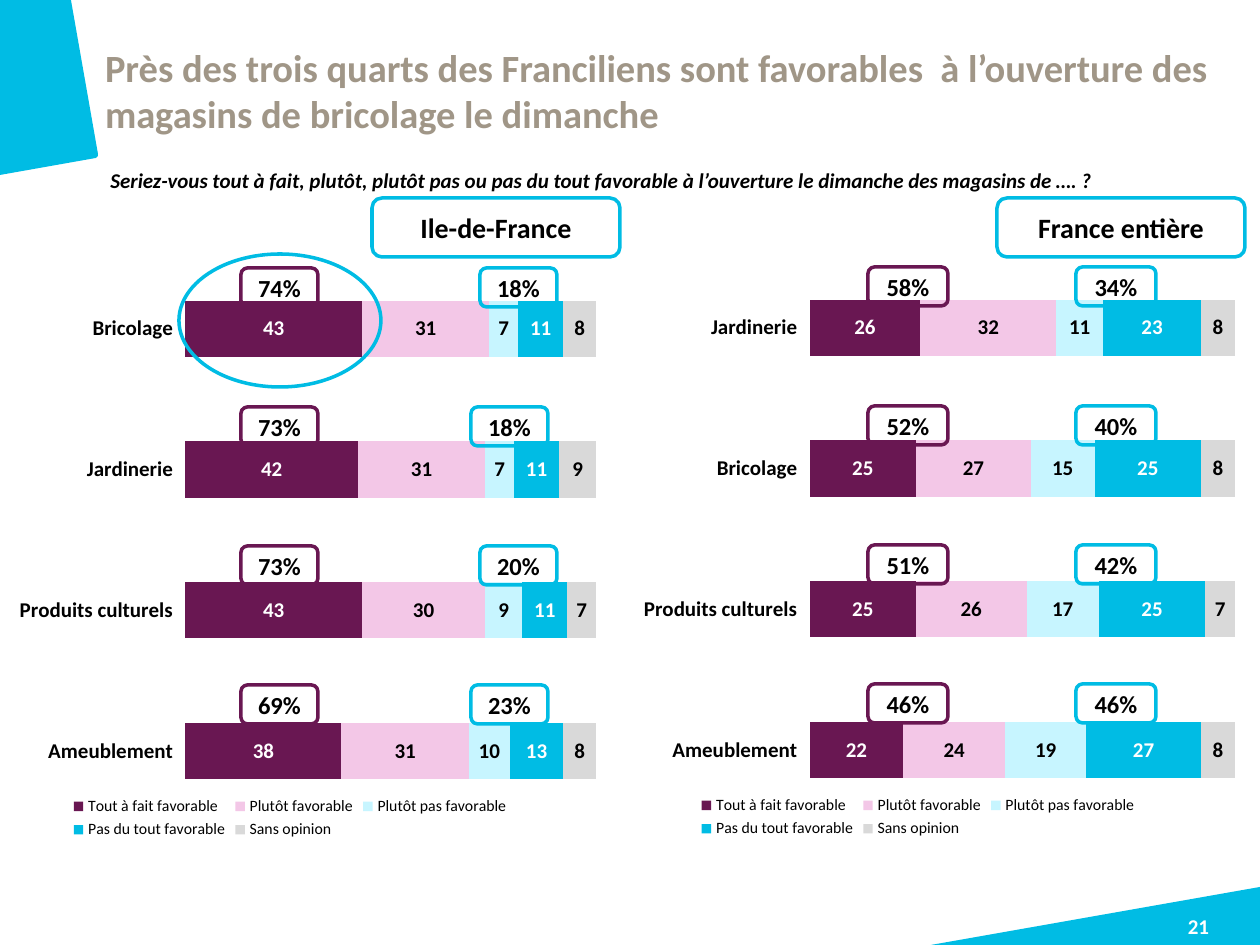
from lxml import etree
from pptx import Presentation
from pptx.chart.data import CategoryChartData
from pptx.dml.color import RGBColor
from pptx.enum.chart import XL_CHART_TYPE, XL_LEGEND_POSITION, XL_TICK_LABEL_POSITION, XL_TICK_MARK
from pptx.enum.shapes import MSO_SHAPE
from pptx.enum.text import MSO_ANCHOR, PP_ALIGN
from pptx.oxml.ns import qn
from pptx.util import Emu, Pt

SCALE = 914400 // 126
FONT = "Calibri"
BLACK = RGBColor(0x00, 0x00, 0x00)
WHITE = RGBColor(0xFF, 0xFF, 0xFF)
TAUPE = RGBColor(0xA0, 0x96, 0x87)
PLUM = RGBColor(0x69, 0x17, 0x52)
PINK = RGBColor(0xF3, 0xC7, 0xE7)
PALE = RGBColor(0xC7, 0xF5, 0xFF)
CYAN = RGBColor(0x00, 0xBC, 0xE4)
GREY = RGBColor(0xD9, 0xD9, 0xD9)
ROUNDED = MSO_SHAPE.ROUNDED_RECTANGLE
OVAL = MSO_SHAPE.OVAL
STACKED = XL_CHART_TYPE.BAR_STACKED_100
BOTTOM = XL_LEGEND_POSITION.BOTTOM
LABELS_LOW = XL_TICK_LABEL_POSITION.LOW
TICK_NONE = XL_TICK_MARK.NONE
MIDDLE, TOP = MSO_ANCHOR.MIDDLE, MSO_ANCHOR.TOP
LEFT, CENTER, JUSTIFY = PP_ALIGN.LEFT, PP_ALIGN.CENTER, PP_ALIGN.JUSTIFY

TITLE = ("Près des trois quarts des Franciliens sont favorables  à l’ouverture "
         "des magasins de bricolage le dimanche")
QUESTION = ("Seriez-vous tout à fait, plutôt, plutôt pas ou pas du tout favorable "
            "à l’ouverture le dimanche des magasins de …. ?")
PAGE_NUMBER = "21"
ANSWERS = [
    ("Tout à fait favorable", PLUM, WHITE),
    ("Plutôt favorable", PINK, BLACK),
    ("Plutôt pas favorable", PALE, BLACK),
    ("Pas du tout favorable", CYAN, WHITE),
    ("Sans opinion", GREY, BLACK),
]
REGIONS = [
    {
        "name": "France entière", "heading_left": 997,
        "chart": (571, 238, 694, 605), "badge_top": 267, "badge_width": 80,
        "favorable_left": 868, "opposed_left": [1076, 1076, 1076, 1076],
        "rows": [
            ("Jardinerie", (26, 32, 11, 23, 8), "58%", "34%"),
            ("Bricolage", (25, 27, 15, 25, 8), "52%", "40%"),
            ("Produits culturels", (25, 26, 17, 25, 7), "51%", "42%"),
            ("Ameublement", (22, 24, 19, 27, 8), "46%", "46%"),
        ],
    },
    {
        "name": "Ile-de-France", "heading_left": 372,
        "chart": (-45, 239, 670, 605), "badge_top": 268, "badge_width": 77,
        "favorable_left": 241, "opposed_left": [480, 471, 480, 471],
        "rows": [
            ("Bricolage", (43, 31, 7, 11, 8), "74%", "18%"),
            ("Jardinerie", (42, 31, 7, 11, 9), "73%", "18%"),
            ("Produits culturels", (43, 30, 9, 11, 7), "73%", "20%"),
            ("Ameublement", (38, 31, 10, 13, 8), "69%", "23%"),
        ],
    },
]
CORNERS = [
    [(931, 945), (1260, 887), (1260, 945)],
    [(0, 0), (71, 0), (98, 154), (98, 156), (96, 158), (0, 175)],
]
PLOT_LAYOUT = {"x": 0.344, "y": 0.032, "w": 0.613, "h": 0.931}
BADGE_PITCH, BADGE_HEIGHT = 139, 39
HEADING_TOP, HEADING_WIDTH, HEADING_HEIGHT = 198, 248, 59
HIGHLIGHT = (179, 254, 202, 133)


def px(*values):
    return [Emu(value * SCALE) for value in values]


def style_font(font, size, color, bold=False, italic=False):
    font.name = FONT
    font.size = Pt(size)
    font.bold = bold
    font.italic = italic
    font.color.rgb = color


def write(shape, text, size, color, align, anchor, italic=False):
    frame = shape.text_frame
    frame.word_wrap = True
    frame.vertical_anchor = anchor
    frame.text = text
    para = frame.paragraphs[0]
    para.alignment = align
    style_font(para.runs[0].font, size, color, True, italic)
    return frame


def add_text(slide, place, text, size, color, align, inset=True, italic=False):
    box = slide.shapes.add_textbox(*px(*place))
    frame = write(box, text, size, color, align, TOP, italic)
    if not inset:
        frame.margin_left = frame.margin_right = 0
        frame.margin_top = frame.margin_bottom = 0


def add_outline(slide, kind, place, color, text=None, size=14):
    shape = slide.shapes.add_shape(kind, *px(*place))
    shape.shadow.inherit = False
    shape.fill.background()
    shape.line.color.rgb = color
    shape.line.width = Pt(2)
    if text:
        write(shape, text, size, BLACK, CENTER, MIDDLE)


def add_corner(slide, points):
    start, *others = [tuple(px(*point)) for point in points]
    builder = slide.shapes.build_freeform(*start)
    builder.add_line_segments(others, close=True)
    corner = builder.convert_to_shape()
    corner.shadow.inherit = False
    corner.fill.solid()
    corner.fill.fore_color.rgb = CYAN
    corner.line.fill.background()


def fix_plot_area(chart):
    plot_area = chart._chartSpace.chart.plotArea
    for old in plot_area.findall(qn("c:layout")):
        plot_area.remove(old)
    layout = etree.Element(qn("c:layout"))
    manual = etree.SubElement(layout, qn("c:manualLayout"))
    settings = {"layoutTarget": "inner", "xMode": "edge", "yMode": "edge", **PLOT_LAYOUT}
    for tag, value in settings.items():
        etree.SubElement(manual, qn(f"c:{tag}")).set("val", str(value))
    plot_area.insert(0, layout)


def add_bars(slide, region):
    data = CategoryChartData()
    data.categories = [row[0] for row in region["rows"]]
    for index, answer in enumerate(ANSWERS):
        data.add_series(answer[0], [row[1][index] for row in region["rows"]])
    chart = slide.shapes.add_chart(STACKED, *px(*region["chart"]), data).chart
    chart.has_title = False
    style_font(chart.font, 18, TAUPE)
    chart.has_legend = True
    chart.legend.position = BOTTOM
    chart.legend.include_in_layout = False
    style_font(chart.legend.font, 9, BLACK)

    categories = chart.category_axis
    categories.reverse_order = True
    categories.major_tick_mark = TICK_NONE
    categories.tick_label_position = LABELS_LOW
    categories.format.line.fill.background()
    style_font(categories.tick_labels.font, 12, BLACK, True)
    chart.value_axis.has_major_gridlines = False
    chart.value_axis.visible = False

    plot = chart.plots[0]
    plot.gap_width = 150
    plot.overlap = 100
    plot.vary_by_categories = False
    for series, (_, fill, label_color) in zip(plot.series, ANSWERS):
        series.format.fill.solid()
        series.format.fill.fore_color.rgb = fill
        series.data_labels.show_value = True
        style_font(series.data_labels.font, 12, label_color, True)
    fix_plot_area(chart)


def add_region(slide, region):
    add_bars(slide, region)
    width = region["badge_width"]
    for index, (_, _, favorable, opposed) in enumerate(region["rows"]):
        top = region["badge_top"] + index * BADGE_PITCH
        badges = [(region["favorable_left"], PLUM, favorable),
                  (region["opposed_left"][index], CYAN, opposed)]
        for left, color, text in badges:
            add_outline(slide, ROUNDED, (left, top, width, BADGE_HEIGHT), color, text)
    heading = (region["heading_left"], HEADING_TOP, HEADING_WIDTH, HEADING_HEIGHT)
    add_outline(slide, ROUNDED, heading, CYAN, region["name"], 16)


def main():
    deck = Presentation()
    deck.slide_width, deck.slide_height = px(1260, 945)
    slide = deck.slides.add_slide(deck.slide_layouts[6])
    for points in CORNERS:
        add_corner(slide, points)
    add_text(slide, (1137, 914, 123, 31), PAGE_NUMBER, 12, WHITE, CENTER, inset=False)
    add_text(slide, (105, 44, 1131, 62), TITLE, 22, TAUPE, LEFT, inset=False)
    add_text(slide, (98, 161, 1135, 38), QUESTION, 12, BLACK, JUSTIFY, italic=True)
    for region in REGIONS:
        add_region(slide, region)
    add_outline(slide, OVAL, HIGHLIGHT, CYAN)
    deck.save("out.pptx")


if __name__ == "__main__":
    main()
